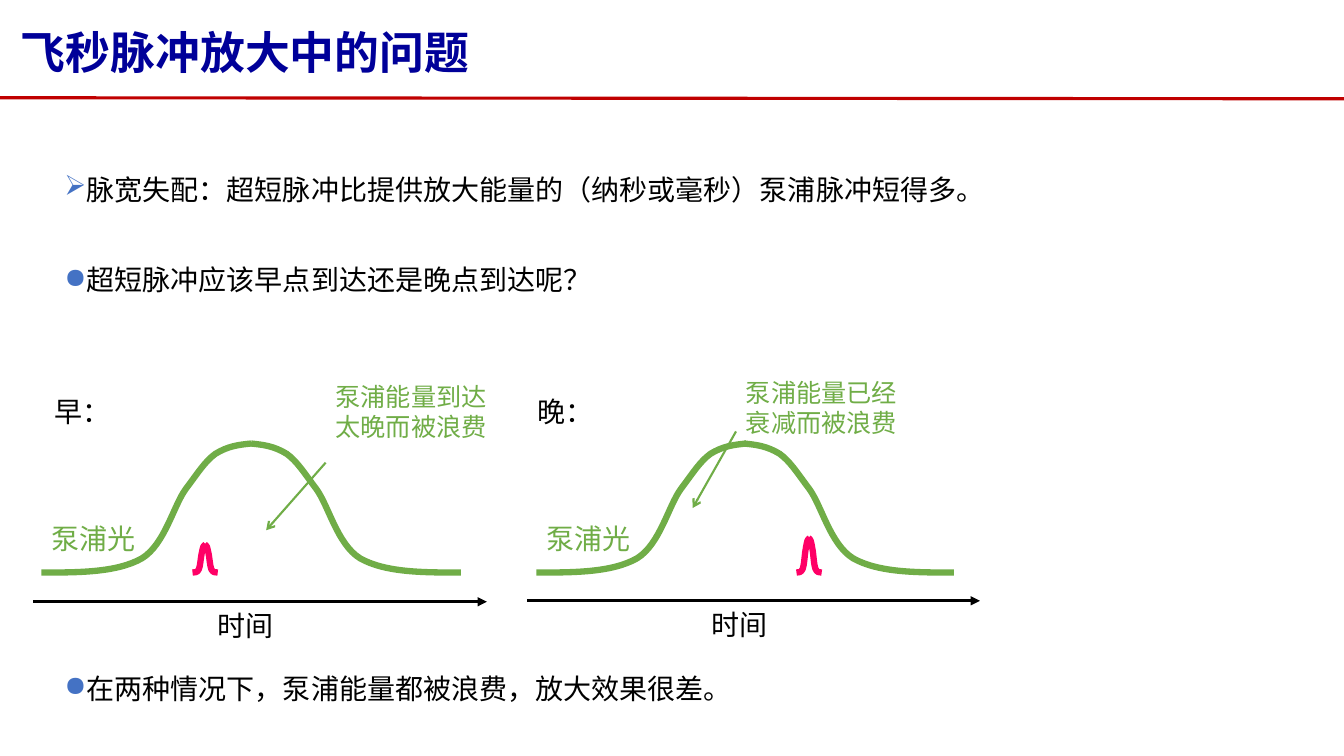
from lxml import etree
from pptx import Presentation
from pptx.dml.color import RGBColor
from pptx.enum import shapes, text
from pptx.oxml import ns
from pptx.util import Inches, Pt

FONT = "Noto Sans CJK SC"
BULLET_FONT = "OpenSymbol"
NAVY = RGBColor(0x00, 0x00, 0x99)
RED = RGBColor(0xC0, 0x00, 0x00)
BLACK = RGBColor(0x00, 0x00, 0x00)
GREEN = RGBColor(0x70, 0xAD, 0x47)
PINK = RGBColor(0xFF, 0x00, 0x66)
BULLET_BLUE = RGBColor(0x44, 0x72, 0xC4)

# Half a pulse, foot to peak: Bezier points as fractions of half width and height
RISE = [(0, 0), (0.18, 0), (0.36, 0), (0.48, 0.11), (0.59, 0.22), (0.63, 0.52),
        (0.69, 0.65), (0.75, 0.78), (0.78, 0.86), (0.83, 0.92), (0.89, 0.98),
        (0.94, 0.99), (1, 1)]
BASELINE = 5.68

deck = Presentation()
deck.slide_width, deck.slide_height = Inches(13.33), Inches(7.5)
page = deck.slides.add_slide(deck.slide_layouts[6])


def add_text(parent, words, left, top, width, height, size=20, color=BLACK):
    box = parent.add_textbox(Inches(left), Inches(top), Inches(width), Inches(height))
    box.text_frame.word_wrap = True
    para = box.text_frame.paragraphs[0]
    para.text = words
    para.font.name, para.font.size = FONT, Pt(size)
    para.font.color.rgb = color
    defaults = para._p.pPr.find(ns.qn("a:defRPr"))
    etree.SubElement(defaults, ns.qn("a:ea"), typeface=FONT)
    return box


def add_line(parent, start, end, color, weight, head=None):
    line = parent.add_connector(shapes.MSO_CONNECTOR.STRAIGHT,
                                *(Inches(value) for value in (*start, *end)))
    line.line.color.rgb, line.line.width = color, Pt(weight)
    if head:
        etree.SubElement(line.line._get_or_add_ln(), ns.qn("a:tailEnd"), type=head)
    etree.SubElement(line._element.spPr, ns.qn("a:effectLst"))


# Title and rule
add_line(page.shapes, (0, 0.97), (13.33, 0.98), RED, 2.25)
title = add_text(page.shapes, "飞秒脉冲放大中的问题", 0.11, 0.12, 13.1, 0.85, 32, NAVY)
title.text_frame.vertical_anchor = text.MSO_ANCHOR.MIDDLE
title.text_frame.paragraphs[0].font.bold = True
title.text_frame.paragraphs[0].line_spacing = 0.9

# Bulleted statements
for mark, words, top, width in [
    ("➢", "脉宽失配：超短脉冲比提供放大能量的（纳秒或毫秒）泵浦脉冲短得多。", 1.66, 9.6),
    ("●", "超短脉冲应该早点到达还是晚点到达呢？", 2.56, 8.97),
    ("●", "在两种情况下，泵浦能量都被浪费，放大效果很差。", 6.61, 6.87),
]:
    statement = add_text(page.shapes, words, 0.54, top, width, 0.44)
    props = statement.text_frame.paragraphs[0]._p.pPr
    bullet_color = etree.Element(ns.qn("a:buClr"))
    etree.SubElement(bullet_color, ns.qn("a:srgbClr"), val=str(BULLET_BLUE))
    props.insert(0, bullet_color)
    props.insert(1, etree.Element(ns.qn("a:buFont"), typeface=BULLET_FONT))
    props.insert(2, etree.Element(ns.qn("a:buChar"), char=mark))

# Early and late arrival diagrams; pump and pulse give left foot, right foot, height
cases = [
    dict(name="早：", name_left=0.44, pump=(0.41, 4.57, 1.28), pulse=(1.91, 2.16, 0.28),
         axis=(0.33, 4.83, 5.97), time_left=2.06,
         note="泵浦能量到达太晚而被浪费", note_box=(3.23, 3.73, 1.82, 0.71),
         arrow=((3.23, 4.59), (2.64, 5.26))),
    dict(name="晚：", name_left=5.23, pump=(5.32, 9.46, 1.28), pulse=(7.9, 8.15, 0.34),
         axis=(5.23, 9.72, 5.96), time_left=6.96,
         note="泵浦能量已经衰减而被浪费", note_box=(7.3, 3.69, 1.92, 0.71),
         arrow=((7.3, 4.28), (6.87, 5.04))),
]
for case in cases:
    diagram = page.shapes.add_group_shape().shapes
    for (left, right, height), half_width, color in [
        (case["pump"], 2.08, GREEN),
        (case["pulse"], 0.13, PINK),
    ]:
        for foot, reach in ((left, half_width), (right, -half_width)):
            points = [(Inches(foot + x * reach), Inches(BASELINE - y * height))
                      for x, y in RISE]
            builder = diagram.build_freeform(*points[0])
            builder.add_line_segments(points[1:], close=False)
            curve = builder.convert_to_shape()
            curve.shadow.inherit = False
            curve.fill.background()
            curve.line.color.rgb, curve.line.width = color, Pt(4.5)
            # Every three straight segments become one Bezier segment
            segments = list(curve._element.iter(ns.qn("a:lnTo")))
            for first in range(0, len(segments), 3):
                trio = segments[first:first + 3]
                bezier = etree.Element(ns.qn("a:cubicBezTo"))
                trio[0].addprevious(bezier)
                for segment in trio:
                    bezier.append(segment[0])
                    segment.getparent().remove(segment)

    axis_start, axis_end, axis_y = case["axis"]
    add_text(diagram, case["name"], case["name_left"], 3.86, 1.05, 0.44)
    add_text(diagram, case["note"], *case["note_box"], size=18, color=GREEN)
    add_line(diagram, *case["arrow"], GREEN, 1.5, "arrow")
    add_line(diagram, (axis_start, axis_y), (axis_end, axis_y), BLACK, 2.25, "triangle")
    add_text(diagram, "时间", case["time_left"], axis_y + 0.02, 0.8, 0.44)
    add_text(diagram, "泵浦光", case["pump"][0], 5.12, 1.1, 0.44, color=GREEN)

deck.save("out.pptx")
